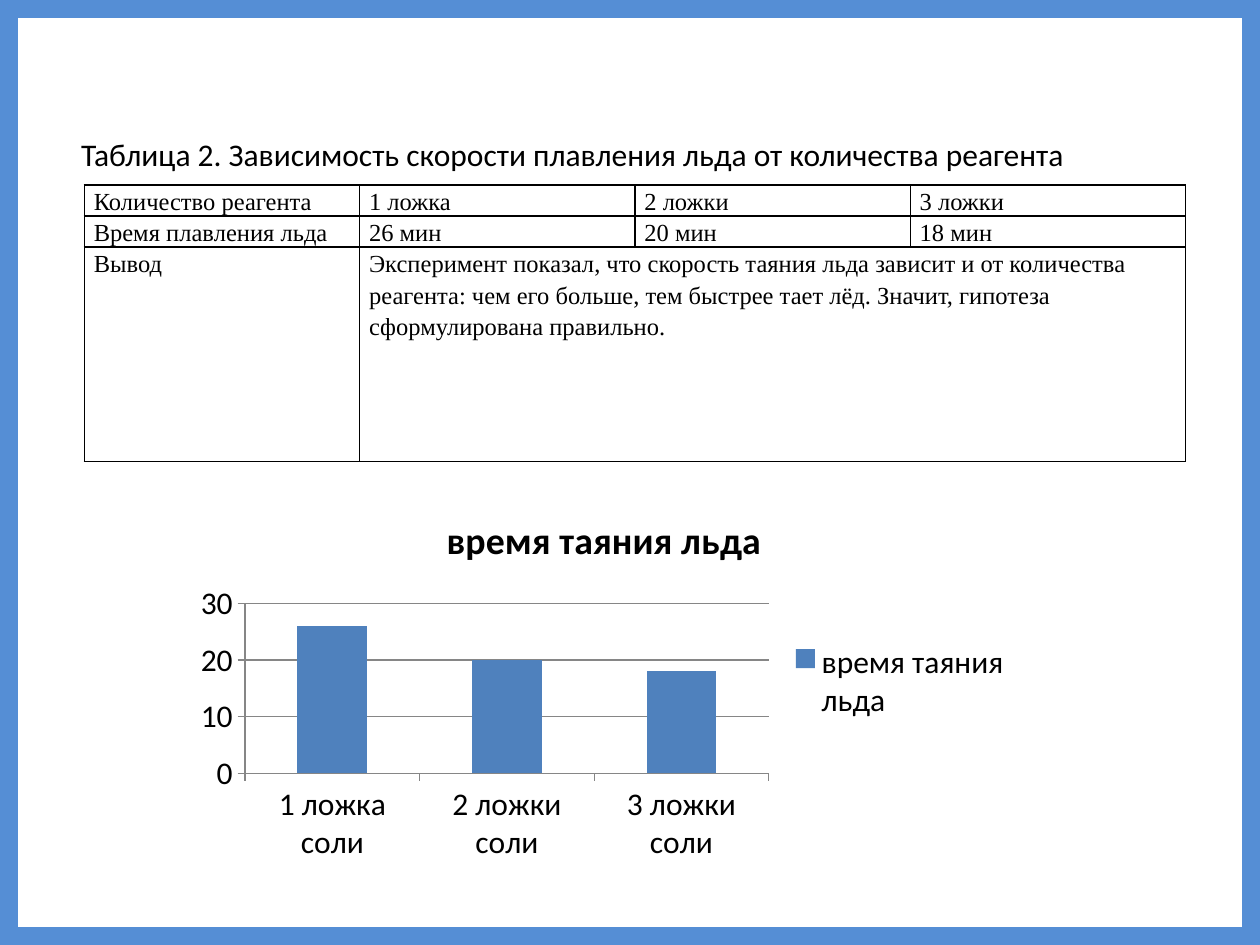
from lxml.etree import SubElement
from pptx import Presentation
from pptx.chart.data import CategoryChartData
from pptx.dml.color import RGBColor
from pptx.enum.chart import XL_CHART_TYPE, XL_LEGEND_POSITION, XL_TICK_MARK
from pptx.enum.shapes import MSO_SHAPE
from pptx.enum.text import MSO_ANCHOR, PP_ALIGN
from pptx.oxml.ns import qn
from pptx.util import Pt

COLORS = {"frame": "558ED5", "bar": "4F81BD", "text": "000000",
          "border": "000000", "axis": "868686"}


def color(name):
    return RGBColor.from_string(COLORS[name])


def style_font(font, size, name="Calibri", bold=False):
    font.size = Pt(size)
    font.name = name
    font.bold = bold
    font.color.rgb = color("text")


def write(text_frame, text, size=18, name="Calibri", align=PP_ALIGN.LEFT, spacing=1.0):
    para = text_frame.paragraphs[0]
    para.alignment = align
    para.line_spacing = spacing
    span = para.add_run()
    span.text = text
    style_font(span.font, size, name)


class SlideBuilder:
    def __init__(self, page):
        self.page = page

    def frame(self, width, height, thickness):
        shape = self.page.shapes.add_shape(MSO_SHAPE.FRAME, 0, 0, Pt(width), Pt(height))
        shape.adjustments[0] = thickness
        shape.shadow.inherit = False
        shape.fill.solid()
        shape.fill.fore_color.rgb = color("frame")
        shape.line.color.rgb = color("frame")
        shape.line.width = Pt(2)
        # Send the frame behind the title
        self.page.shapes.title._element.addprevious(shape._element)

    def title(self, text, left, top, width, height):
        box = self.page.shapes.title
        box.left, box.top, box.width, box.height = map(Pt, (left, top, width, height))
        box.text_frame.vertical_anchor = MSO_ANCHOR.MIDDLE
        write(box.text_frame, text, align=PP_ALIGN.CENTER)

    def cell(self, cell, text):
        cell.margin_left = cell.margin_right = Pt(5.4)
        cell.margin_top = cell.margin_bottom = 0
        properties = cell._tc.get_or_add_tcPr()
        for side in ("lnL", "lnR", "lnT", "lnB"):
            line = SubElement(properties, qn(f"a:{side}"), w=str(Pt(1)))
            fill = SubElement(line, qn("a:solidFill"))
            SubElement(fill, qn("a:srgbClr"), val=COLORS["border"])
        cell.fill.background()
        if text:
            write(cell.text_frame, text, 14, "Times New Roman", spacing=1.15)

    def table(self, rows, heights, left, top, width):
        columns = len(rows[0])
        table = self.page.shapes.add_table(
            len(rows), columns, Pt(left), Pt(top), Pt(width), Pt(sum(heights))).table
        table.first_row = table.horz_banding = False
        for row, height, texts in zip(table.rows, heights, rows):
            row.height = Pt(height)
            for index, cell in enumerate(row.cells):
                self.cell(cell, texts[index] if index < len(texts) else "")
            # A short row stretches its last text to the right edge
            if len(texts) < columns:
                row.cells[len(texts) - 1].merge(row.cells[columns - 1])

    def chart(self, name, values, left, top, width, height):
        data = CategoryChartData()
        data.categories = list(values)
        data.add_series(name, list(values.values()))
        chart = self.page.shapes.add_chart(
            XL_CHART_TYPE.COLUMN_CLUSTERED, Pt(left), Pt(top), Pt(width), Pt(height), data).chart
        style_font(chart.font, 18)

        chart.has_title = True
        chart.chart_title.text_frame.text = name
        span = chart.chart_title.text_frame.paragraphs[0].runs[0]
        style_font(span.font, 21.6, bold=True)
        chart.has_legend = True
        chart.legend.position = XL_LEGEND_POSITION.RIGHT
        chart.legend.include_in_layout = False

        plot = chart.plots[0]
        plot.gap_width = 150
        plot.vary_by_categories = False
        bars = plot.series[0].format.fill
        bars.solid()
        bars.fore_color.rgb = color("bar")

        scale = chart.value_axis
        scale.minimum_scale, scale.maximum_scale, scale.major_unit = 0, 30, 10
        scale.has_major_gridlines = True
        for axis in (chart.category_axis, scale):
            axis.major_tick_mark = XL_TICK_MARK.OUTSIDE
        for part in (chart.category_axis, scale, scale.major_gridlines):
            part.format.line.color.rgb = color("axis")
            part.format.line.width = Pt(0.75)


def main():
    deck = Presentation()
    deck.slide_width, deck.slide_height = Pt(720), Pt(540)
    builder = SlideBuilder(deck.slides.add_slide(deck.slide_layouts[5]))

    # Border and heading
    builder.frame(720, 540, 0.017)
    builder.title("Таблица 2. Зависимость скорости плавления льда от количества реагента",
                  14.4, 43.2, 625.7, 90)

    # Results of the experiment
    builder.table([
        ["Количество реагента", "1 ложка", "2 ложки", "3 ложки"],
        ["Время плавления льда", "26 мин", "20 мин", "18 мин"],
        ["Вывод", "Эксперимент показал, что скорость таяния льда зависит и от количества "
                  "реагента: чем его больше, тем быстрее тает лёд. Значит, гипотеза "
                  "сформулирована правильно."],
    ], [11.5, 11.5, 122.4], 48.2, 105.6, 629.3)

    # Melting time chart
    builder.chart("время таяния льда",
                  {"1 ложка соли": 26, "2 ложки соли": 20, "3 ложки соли": 18},
                  105.1, 281.5, 480.2, 215.3)

    deck.save("out.pptx")


if __name__ == "__main__":
    main()
